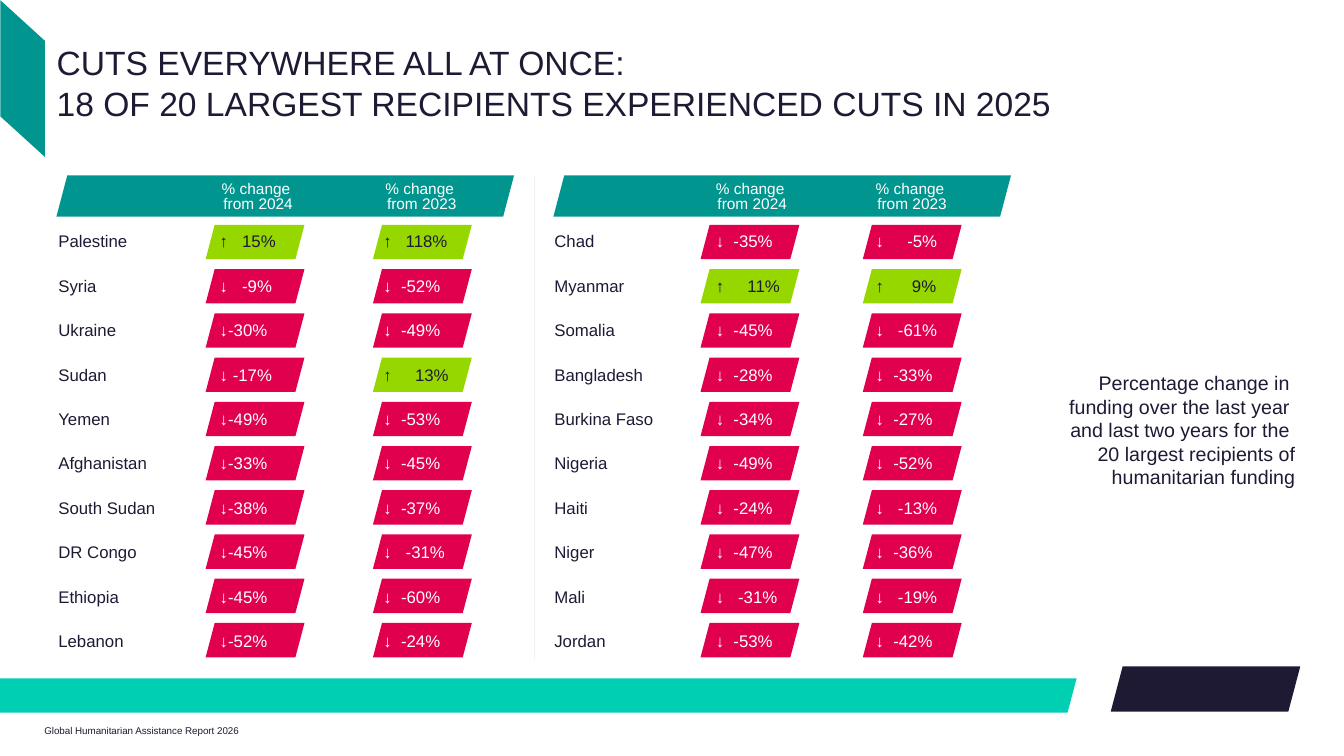
from dataclasses import dataclass

from lxml.etree import SubElement
from pptx import Presentation
from pptx.dml.color import RGBColor
from pptx.enum.shapes import MSO_CONNECTOR, MSO_SHAPE
from pptx.enum.text import MSO_ANCHOR, PP_ALIGN
from pptx.oxml.ns import qn
from pptx.util import Pt

NAVY = RGBColor(0x1E, 0x1A, 0x34)
WHITE = RGBColor(0xFF, 0xFF, 0xFF)
TEAL = RGBColor(0x00, 0x96, 0x8F)
MINT = RGBColor(0x00, 0xCF, 0xB4)
RED = RGBColor(0xE0, 0x00, 0x4D)
GREEN = RGBColor(0x97, 0xD7, 0x00)
PALE = RGBColor(0xF2, 0xF2, 0xF2)

FONT = "Arial"
NO_STYLE = "{2D5ABB26-0587-4C30-8999-92F81FD0307C}"
SLANT = 0.264
TABLE_TOP, ROW_H = 124.6, 31.8
PILL_TOP, PILL_PITCH, PILL_W, PILL_H = 160.6, 31.6, 70.6, 24.5
HEADER_TOP, HEADER_W, HEADER_H = 125.3, 326.9, 29.5
NAME_W = 85
ARROW_W, SPACE_W = 6, 3.33
HEADINGS = ["% change \vfrom 2024", "% change \vfrom 2023"]


@dataclass(frozen=True)
class Change:
    percent: int
    gap: int

    @property
    def rises(self) -> bool:
        return self.percent > 0


@dataclass(frozen=True)
class Country:
    name: str
    since_2024: Change
    since_2023: Change


@dataclass(frozen=True)
class Panel:
    header_left: float
    table_left: float
    change_w: float
    pill_lefts: tuple[float, float]
    countries: list[Country]


def country(name: str, pct_2024: int, gap_2024: int, pct_2023: int, gap_2023: int) -> Country:
    return Country(name, Change(pct_2024, gap_2024), Change(pct_2023, gap_2023))


PANELS = [
    Panel(40.3, 41, 116.9, (146.9, 266.4), [
        country("Palestine", 15, 3, 118, 3),
        country("Syria", -9, 3, -52, 2),
        country("Ukraine", -30, 0, -49, 2),
        country("Sudan", -17, 1, 13, 5),
        country("Yemen", -49, 0, -53, 2),
        country("Afghanistan", -33, 0, -45, 2),
        country("South Sudan", -38, 0, -37, 2),
        country("DR Congo", -45, 0, -31, 3),
        country("Ethiopia", -45, 0, -60, 2),
        country("Lebanon", -52, 0, -24, 2),
    ]),
    Panel(395.3, 395.3, 114.2, (500.4, 616.3), [
        country("Chad", -35, 2, -5, 5),
        country("Myanmar", 11, 5, 9, 6),
        country("Somalia", -45, 2, -61, 3),
        country("Bangladesh", -28, 2, -33, 2),
        country("Burkina Faso", -34, 2, -27, 2),
        country("Nigeria", -49, 2, -52, 2),
        country("Haiti", -24, 2, -13, 3),
        country("Niger", -47, 2, -36, 2),
        country("Mali", -31, 3, -19, 3),
        country("Jordan", -53, 2, -42, 2),
    ]),
]


def add_slanted(s, left: float, top: float, width: float, height: float,
                color: RGBColor, slant: float = SLANT, rotation: float = 0) -> None:
    sp = s.shapes.add_shape(MSO_SHAPE.PARALLELOGRAM, Pt(left), Pt(top), Pt(width), Pt(height))
    sp.adjustments[0] = slant
    sp.rotation = rotation
    sp.shadow.inherit = False
    sp.fill.solid()
    sp.fill.fore_color.rgb = color
    sp.line.fill.background()


def style(p, size: float, color: RGBColor) -> None:
    p.font.name = FONT
    p.font.size = Pt(size)
    p.font.color.rgb = color


def add_text(s, left: float, top: float, width: float, height: float, text: str,
             size: float, align: PP_ALIGN = PP_ALIGN.LEFT) -> None:
    tf = s.shapes.add_textbox(Pt(left), Pt(top), Pt(width), Pt(height)).text_frame
    tf.word_wrap = True
    tf.margin_left = tf.margin_top = tf.margin_right = tf.margin_bottom = 0
    p = tf.paragraphs[0]
    p.text = text
    p.alignment = align
    p.line_spacing = Pt(round(size * 1.2, 1))
    style(p, size, NAVY)


def fill_cell(cell, text: str, left: float, right: float):
    cell.margin_left, cell.margin_right = Pt(left), Pt(right)
    cell.margin_top, cell.margin_bottom = Pt(0.7), 0
    cell.vertical_anchor = MSO_ANCHOR.MIDDLE
    p = cell.text_frame.paragraphs[0]
    p.text = text
    return p


def fill_change(cell, change: Change) -> None:
    arrow = "↑" if change.rises else "↓"
    separator = "\t" if change.gap > 1 else " " * change.gap
    p = fill_cell(cell, f"{arrow}{separator}{change.percent}%", 31, 0.7)
    if change.gap > 1:
        tabs = SubElement(p._p.get_or_add_pPr(), qn("a:tabLst"))
        stop = Pt(ARROW_W + SPACE_W * change.gap)
        SubElement(tabs, qn("a:tab"), pos=str(int(stop)), algn="l")
    style(p, 12, NAVY if change.rises else WHITE)


def add_panel_shapes(s, panel: Panel) -> None:
    add_slanted(s, panel.header_left, HEADER_TOP, HEADER_W, HEADER_H, TEAL)
    for row, entry in enumerate(panel.countries):
        for left, change in zip(panel.pill_lefts, (entry.since_2024, entry.since_2023)):
            add_slanted(s, left, PILL_TOP + row * PILL_PITCH, PILL_W, PILL_H,
                        GREEN if change.rises else RED)


def add_panel_table(s, panel: Panel) -> None:
    widths = [NAME_W, panel.change_w, panel.change_w]
    rows = len(panel.countries) + 1
    table = s.shapes.add_table(rows, len(widths), Pt(panel.table_left), Pt(TABLE_TOP),
                               Pt(sum(widths)), Pt(rows * ROW_H)).table
    table.first_row = table.horz_banding = False
    table._tbl.tblPr.find(qn("a:tableStyleId")).text = NO_STYLE
    for column, width in zip(table.columns, widths):
        column.width = Pt(width)
    for row in table.rows:
        row.height = Pt(ROW_H)
    for cell in table.iter_cells():
        cell.fill.background()
    for col, heading in enumerate(HEADINGS, 1):
        p = fill_cell(table.cell(0, col), heading, 0, 0)
        p.alignment = PP_ALIGN.CENTER
        p.line_spacing = 0.9
        style(p, 11, WHITE)
    for row, entry in enumerate(panel.countries, 1):
        style(fill_cell(table.cell(row, 0), entry.name, 0.7, 0.7), 12, NAVY)
        fill_change(table.cell(row, 1), entry.since_2024)
        fill_change(table.cell(row, 2), entry.since_2023)


def add_divider(s) -> None:
    line = s.shapes.add_connector(MSO_CONNECTOR.STRAIGHT, Pt(381.6), Pt(126), Pt(381.6), Pt(471.6))
    line.line.color.rgb = PALE
    line.line.width = Pt(0.5)
    SubElement(line._element.spPr, qn("a:effectLst"))


def main() -> None:
    prs = Presentation()
    prs.slide_width, prs.slide_height = Pt(960), Pt(540)
    s = prs.slides.add_slide(prs.slide_layouts[6])
    for panel in PANELS:
        add_panel_shapes(s, panel)
    add_slanted(s, -39.8, 40.2, 111.9, 31.8, TEAL, slant=0.91, rotation=270)
    add_text(s, 40.5, 30.2, 753, 26,
             "CUTS EVERYWHERE ALL AT ONCE:\v18 OF 20 LARGEST RECIPIENTS EXPERIENCED CUTS IN 2025", 24)
    add_divider(s)
    add_text(s, 710.6, 265, 214.6, 70,
             "Percentage change in \vfunding over the last year \vand last two years for the \v"
             "20 largest recipients of humanitarian funding", 14, PP_ALIGN.RIGHT)
    add_text(s, 31.7, 517.7, 324, 22, "Global Humanitarian Assistance Report 2026", 7)
    for panel in PANELS:
        add_panel_table(s, panel)
    add_slanted(s, 793.4, 475.9, 135.4, 32.4, NAVY)
    add_slanted(s, -7.2, 484.6, 776.2, 24.5, MINT)
    prs.save("out.pptx")


if __name__ == "__main__":
    main()
